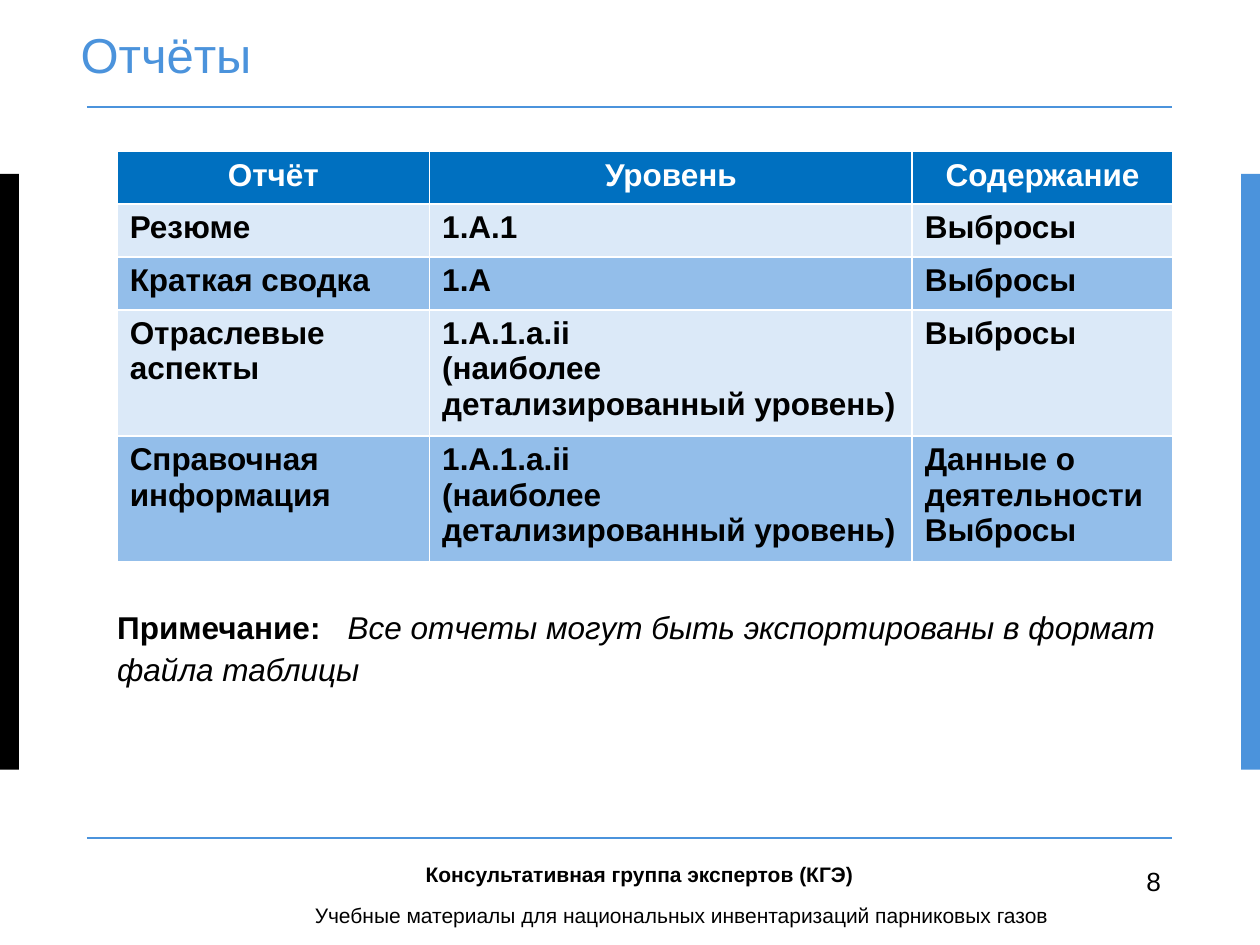
from lxml import etree
from pptx import Presentation
from pptx.dml.color import RGBColor
from pptx.enum.shapes import MSO_CONNECTOR, MSO_SHAPE
from pptx.enum.text import MSO_ANCHOR, PP_ALIGN
from pptx.oxml.ns import qn
from pptx.util import Inches, Pt

STRAIGHT = MSO_CONNECTOR.STRAIGHT
RECTANGLE = MSO_SHAPE.RECTANGLE
TOP, MIDDLE = MSO_ANCHOR.TOP, MSO_ANCHOR.MIDDLE
LEFT, CENTER = PP_ALIGN.LEFT, PP_ALIGN.CENTER

BLACK = RGBColor(0, 0, 0)
WHITE = RGBColor(255, 255, 255)
SKY = RGBColor(0x4B, 0x93, 0xDC)
HEADER = RGBColor(0x00, 0x70, 0xC0)
BANDS = (RGBColor(0xDB, 0xE9, 0xF8), RGBColor(0x93, 0xBE, 0xEA))

FONT = "Arial"
WIDTH, HEIGHT = 10, 7.5
MARGIN, RIGHT_EDGE = 0.69, 9.3
CONTENT_LEFT = 0.93
RULES = (0.85, 6.65)
BAR_WIDTH, BAR_TOP, BAR_HEIGHT = 0.15, 1.38, 4.73

DETAILED = "1.A.1.a.ii\n(наиболее детализированный уровень)"
REPORTS = [
    ("Отчёт", "Уровень", "Содержание"),
    ("Резюме", "1.A.1", "Выбросы"),
    ("Краткая сводка", "1.A", "Выбросы"),
    ("Отраслевые аспекты", DETAILED, "Выбросы"),
    ("Справочная информация", DETAILED, "Данные о деятельности Выбросы"),
]
COLUMNS = (2.48, 3.83, 2.07)
ROWS = (0.42, 0.42, 0.42, 0.72, 0.72)
TABLE_TOP = 1.2

NOTE_LABEL = "Примечание:"
NOTE_TEXT = "Все отчеты могут быть экспортированы в формат файла таблицы"
NOTE_TAB = 1.83

# left, top, width, height, text, size, bold
FOOTERS = [
    (9, 6.82, 0.31, 0.35, "8", 15, False),
    (3.28, 6.79, 3.78, 0.27, "Консультативная группа экспертов (КГЭ)", 12, True),
    (2.4, 7.11, 6.14, 0.18,
     "Учебные материалы для национальных инвентаризаций парниковых газов", 12, False),
]


def add_run(paragraph, text, size, color=BLACK, bold=False, italic=False):
    run = paragraph.add_run()
    run.text = text
    font = run.font
    font.name, font.size = FONT, Pt(size)
    font.bold, font.italic = bold, italic
    font.color.rgb = color


def add_text_box(slide, left, top, width, height, inset=True, anchor=TOP):
    """Add a wrapping text box and return its first paragraph."""
    box = slide.shapes.add_textbox(*map(Inches, (left, top, width, height)))
    frame = box.text_frame
    frame.word_wrap = True
    frame.vertical_anchor = anchor
    if not inset:
        frame.margin_left = frame.margin_right = 0
        frame.margin_top = frame.margin_bottom = 0
    return frame.paragraphs[0]


def add_bar(slide, left, color):
    bar = slide.shapes.add_shape(
        RECTANGLE, *map(Inches, (left, BAR_TOP, BAR_WIDTH, BAR_HEIGHT)))
    bar.shadow.inherit = False
    bar.fill.solid()
    bar.fill.fore_color.rgb = color
    bar.line.fill.background()


def add_rule(slide, top):
    rule = slide.shapes.add_connector(
        STRAIGHT, *map(Inches, (MARGIN, top, RIGHT_EDGE, top)))
    rule.line.color.rgb = SKY
    rule.line.width = Pt(1)
    etree.SubElement(rule._element.spPr, qn("a:effectLst"))


def style_cell(cell, color):
    """Give a cell thin white borders and a solid fill."""
    properties = cell._tc.get_or_add_tcPr()
    for side in ("a:lnL", "a:lnR", "a:lnT", "a:lnB"):
        border = etree.SubElement(properties, qn(side), w=str(Pt(1)))
        fill = etree.SubElement(border, qn("a:solidFill"))
        etree.SubElement(fill, qn("a:srgbClr"), val=str(WHITE))
    cell.fill.solid()
    cell.fill.fore_color.rgb = color


def add_report_table(slide):
    table = slide.shapes.add_table(
        len(ROWS), len(COLUMNS), Inches(CONTENT_LEFT), Inches(TABLE_TOP),
        Inches(sum(COLUMNS)), Inches(sum(ROWS))).table
    table.horz_banding = False
    for column, width in zip(table.columns, COLUMNS):
        column.width = Inches(width)
    for index, (row, height, texts) in enumerate(zip(table.rows, ROWS, REPORTS)):
        row.height = Inches(height)
        is_header = index == 0
        for cell, text in zip(row.cells, texts):
            style_cell(cell, HEADER if is_header else BANDS[(index - 1) % 2])
            frame = cell.text_frame
            for number, line in enumerate(text.split("\n")):
                paragraph = frame.add_paragraph() if number else frame.paragraphs[0]
                paragraph.alignment = CENTER if is_header else LEFT
                add_run(paragraph, line, 18, WHITE if is_header else BLACK, bold=True)


def add_note(slide):
    paragraph = add_text_box(slide, CONTENT_LEFT, 4.79, 8.35, 0.81, inset=False)
    paragraph.line_spacing = Pt(24)
    tabs = etree.SubElement(paragraph._p.get_or_add_pPr(), qn("a:tabLst"))
    etree.SubElement(tabs, qn("a:tab"), pos=str(Inches(NOTE_TAB)), algn="l")
    add_run(paragraph, NOTE_LABEL + "\t", 18, bold=True)
    add_run(paragraph, NOTE_TEXT, 18, italic=True)


def main():
    presentation = Presentation()
    presentation.slide_width = Inches(WIDTH)
    presentation.slide_height = Inches(HEIGHT)
    slide = presentation.slides.add_slide(presentation.slide_layouts[6])

    add_bar(slide, 0, BLACK)
    add_bar(slide, WIDTH - BAR_WIDTH, SKY)
    for top in RULES:
        add_rule(slide, top)

    title = add_text_box(slide, 0.64, 0.06, 8.67, 1, inset=False, anchor=MIDDLE)
    title.line_spacing = Pt(15)
    add_run(title, "Отчёты", 28, SKY)

    add_note(slide)
    add_report_table(slide)
    for left, top, width, height, text, size, bold in FOOTERS:
        paragraph = add_text_box(slide, left, top, width, height)
        add_run(paragraph, text, size, bold=bold)

    presentation.save("out.pptx")


if __name__ == "__main__":
    main()
